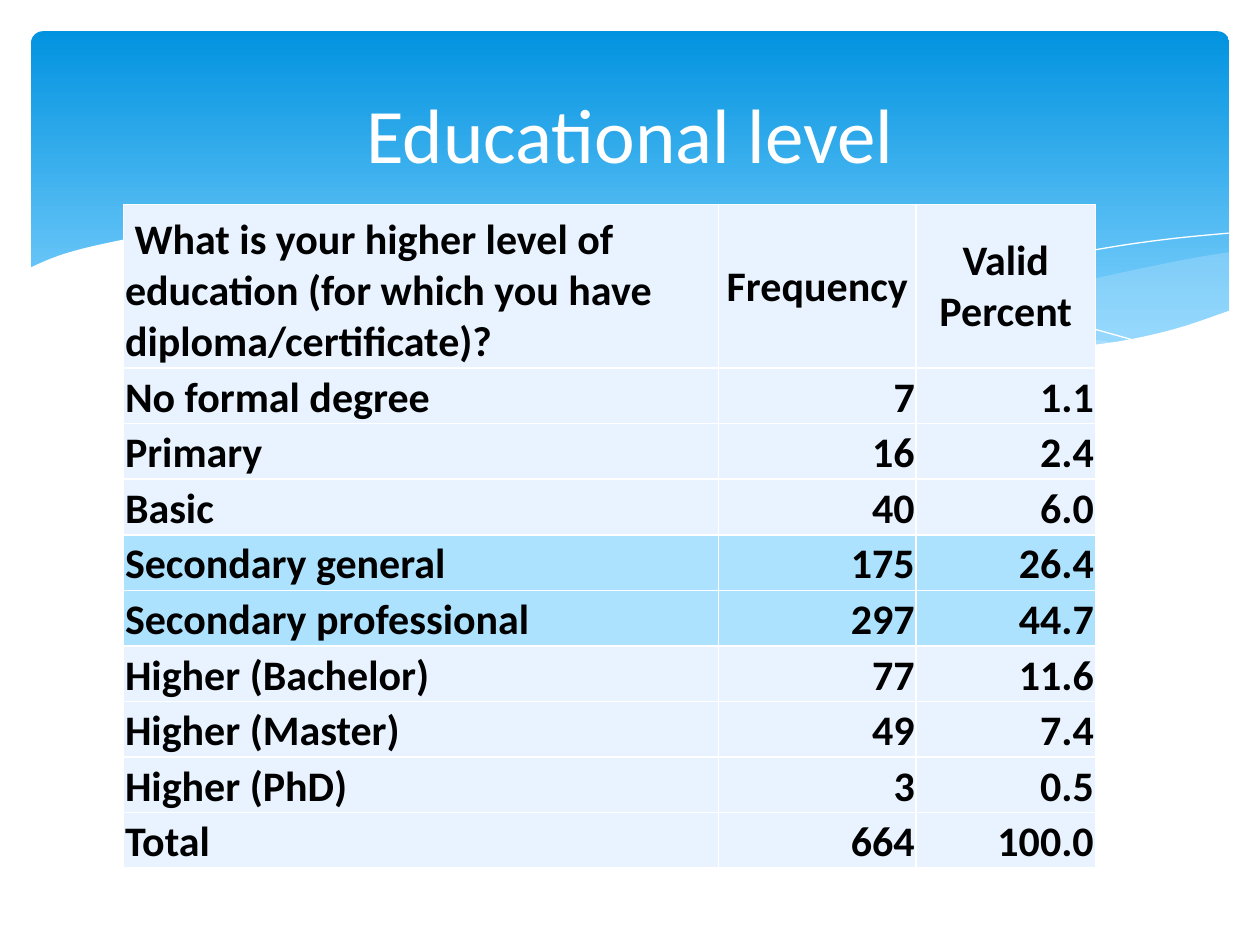
from lxml import etree
from pptx import Presentation
from pptx.dml.color import RGBColor
from pptx.enum.shapes import MSO_SHAPE
from pptx.enum.text import MSO_ANCHOR, PP_ALIGN
from pptx.oxml.ns import qn
from pptx.util import Cm, Pt

LEFT, CENTER, RIGHT = PP_ALIGN.LEFT, PP_ALIGN.CENTER, PP_ALIGN.RIGHT
MIDDLE, BOTTOM = MSO_ANCHOR.MIDDLE, MSO_ANCHOR.BOTTOM
FONT = "Calibri"
COLORS = {
    "white": "FFFFFF", "black": "000000", "banner top": "0293E0",
    "banner bottom": "83D3FE", "wave": "C6E7FC", "row": "E8F3FF",
    "highlight": "ADE2FE",
}

TITLE = "Educational level"
HEADER = (" What is your higher level of education (for which you have "
          "diploma/certificate)?", "Frequency", "Valid Percent")
LEVELS = [
    ("No formal degree", "7", "1.1"),
    ("Primary", "16", "2.4"),
    ("Basic", "40", "6.0"),
    ("Secondary general", "175", "26.4"),
    ("Secondary professional", "297", "44.7"),
    ("Higher (Bachelor)", "77", "11.6"),
    ("Higher (Master)", "49", "7.4"),
    ("Higher (PhD)", "3", "0.5"),
    ("Total", "664", "100.0"),
]
HIGHLIGHTED = {"Secondary general", "Secondary professional"}
COLUMN_WIDTHS = (11.99, 3.99, 3.61)
HEADER_HEIGHT, ROW_HEIGHT = 3.3, 1.12

# Wave edges: points in centimetres that a smooth curve passes through
RIGHT_WAVE_TOP = [(24.79, 5.08), (23.75, 5.26), (21.87, 5.66), (19.79, 6.15),
                  (17.93, 6.53), (16.79, 6.73)]
RIGHT_WAVE_BOTTOM = [(16.79, 6.73), (17.91, 6.88), (19.23, 7.01), (20.68, 7.06),
                     (21.92, 6.99), (23.19, 6.78), (24.1, 6.53), (24.79, 6.27)]
LONG_WAVE_TOP = [(7.26, 4.85), (8.74, 4.72), (10.13, 4.72), (11.81, 4.85),
                 (13.41, 5.08), (15.98, 5.64), (18.82, 6.27), (21.26, 6.73),
                 (22.68, 6.93)]
LONG_WAVE_BOTTOM = [(22.68, 6.93), (21.29, 7.06), (19.94, 7.06), (18.34, 6.96),
                    (16.51, 6.71), (14.38, 6.3), (11.4, 5.64), (9.19, 5.16),
                    (7.26, 4.85)]
FALLING_LINE = [(7.85, 4.95), (8.97, 4.8), (10.57, 4.75), (12.42, 4.83),
                (14.12, 5), (16.15, 5.28), (18.47, 5.74), (21.11, 6.38),
                (23.04, 6.91)]
RISING_LINE = [(15.57, 6.53), (17.65, 5.97), (19.71, 5.49), (22, 5.05),
               (23.47, 4.83), (24.77, 4.7)]
COVER_EDGE = [(24.82, 6.25), (23.62, 6.65), (22.23, 6.93), (20.55, 7.04),
              (18.44, 6.91), (16.46, 6.65), (14.1, 6.22), (11.35, 5.59),
              (9.27, 5.13), (7.42, 4.83), (5.84, 4.7), (4.5, 4.67),
              (3.02, 4.75), (1.93, 4.95), (1.17, 5.16), (0.58, 5.41)]
COVER_CORNERS = [(0.58, 8.36), (24.82, 8.36)]


def color(name):
    return RGBColor.from_string(COLORS[name])


def smooth(points, steps=5):
    """Return a Catmull-Rom curve through the points as a dense list."""
    padded = [points[0], *points, points[-1]]
    curve = []
    for a, b, c, d in zip(padded, padded[1:], padded[2:], padded[3:]):
        for step in range(steps):
            t = step / steps
            curve.append(tuple(
                (2 * q + (r - p) * t + (2 * p - 5 * q + 4 * r - s) * t ** 2
                 + (3 * q - p - 3 * r + s) * t ** 3) / 2
                for p, q, r, s in zip(a, b, c, d)))
    return curve + [points[-1]]


def add_outline(slide, points, closed):
    start, *rest = [(Cm(x), Cm(y)) for x, y in points]
    builder = slide.shapes.build_freeform(*start, scale=1.0)
    builder.add_line_segments(rest, close=closed)
    outline = builder.convert_to_shape()
    outline.shadow.inherit = False
    return outline


def add_area(slide, points, fill, opacity=100):
    area = add_outline(slide, points, closed=True)
    area.fill.solid()
    area.fill.fore_color.rgb = color(fill)
    area.line.fill.background()
    if opacity < 100:
        tint = area.fill._xPr.find(qn("a:solidFill"))[0]
        etree.SubElement(tint, qn("a:alpha"), val=str(opacity * 1000))


def add_hairline(slide, points):
    hairline = add_outline(slide, points, closed=False)
    hairline.fill.background()
    hairline.line.color.rgb = color("white")
    hairline.line.width = Pt(0)


def add_banner(slide):
    banner = slide.shapes.add_shape(MSO_SHAPE.ROUNDED_RECTANGLE, Cm(0.63),
                                    Cm(0.63), Cm(24.15), Cm(6.86))
    banner.adjustments[0] = 0.034
    banner.shadow.inherit = False
    banner.line.fill.background()
    banner.fill.gradient()
    banner.fill.gradient_angle = 270
    stops = (("banner top", 0), ("banner bottom", 0.9))
    for stop, (name, position) in zip(banner.fill.gradient_stops, stops):
        stop.color.rgb = color(name)
        stop.position = position
    add_area(slide, smooth(RIGHT_WAVE_TOP) + smooth(RIGHT_WAVE_BOTTOM), "wave", 29)
    add_area(slide, smooth(LONG_WAVE_TOP) + smooth(LONG_WAVE_BOTTOM), "wave", 40)
    add_hairline(slide, smooth(FALLING_LINE))
    add_hairline(slide, smooth(RISING_LINE))
    add_area(slide, smooth(COVER_EDGE) + COVER_CORNERS, "white")


def write(text_frame, text, size, font_color, align, bold=False):
    text_frame.text = text
    para = text_frame.paragraphs[0]
    para.alignment = align
    font = para.runs[0].font
    font.name, font.size, font.bold = FONT, Pt(size), bold
    font.color.rgb = color(font_color)


def add_title(slide):
    box = slide.shapes.add_textbox(Cm(1.27), Cm(0.94), Cm(22.86), Cm(3.48))
    box.text_frame.word_wrap = True
    box.text_frame.vertical_anchor = MIDDLE
    write(box.text_frame, TITLE, 44, "white", CENTER)


def add_borders(cell):
    properties = cell._tc.get_or_add_tcPr()
    for index, side in enumerate(("lnL", "lnR", "lnT", "lnB")):
        border = etree.Element(qn(f"a:{side}"), w=str(Pt(1)))
        fill = etree.SubElement(border, qn("a:solidFill"))
        etree.SubElement(fill, qn("a:srgbClr"), val=COLORS["white"])
        properties.insert(index, border)


def add_level_table(slide):
    rows = [HEADER, *LEVELS]
    heights = [HEADER_HEIGHT] + [ROW_HEIGHT] * len(LEVELS)
    table = slide.shapes.add_table(
        len(rows), len(HEADER), Cm(2.49), Cm(4.12),
        Cm(sum(COLUMN_WIDTHS)), Cm(sum(heights))).table
    for column, width in zip(table.columns, COLUMN_WIDTHS):
        column.width = Cm(width)
    for row_index, (values, height) in enumerate(zip(rows, heights)):
        table.rows[row_index].height = Cm(height)
        number_align = RIGHT if row_index else CENTER
        fill = "highlight" if values[0] in HIGHLIGHTED else "row"
        for column_index, value in enumerate(values):
            cell = table.cell(row_index, column_index)
            cell.margin_left = cell.margin_right = cell.margin_top = Cm(0.03)
            cell.margin_bottom = 0
            is_number_header = row_index == 0 and column_index > 0
            cell.vertical_anchor = MIDDLE if is_number_header else BOTTOM
            cell.fill.solid()
            cell.fill.fore_color.rgb = color(fill)
            add_borders(cell)
            write(cell.text_frame, value, 24, "black",
                  number_align if column_index else LEFT, bold=True)


def main():
    deck = Presentation()
    deck.slide_width, deck.slide_height = Cm(25.4), Cm(19.05)
    slide = deck.slides.add_slide(deck.slide_layouts[6])
    add_banner(slide)
    add_title(slide)
    add_level_table(slide)
    deck.save("out.pptx")


if __name__ == "__main__":
    main()
